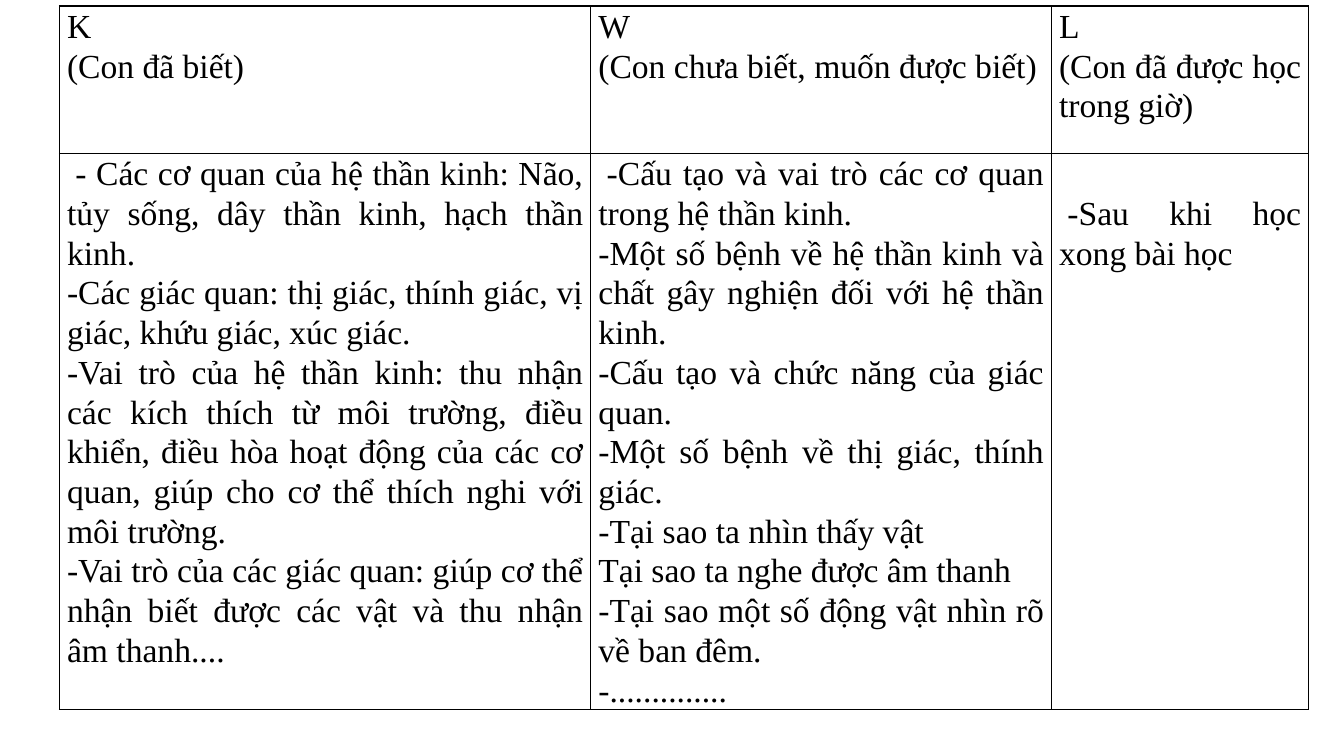
from lxml import etree
from pptx import Presentation
from pptx.dml.color import RGBColor
from pptx.enum.text import PP_ALIGN
from pptx.oxml.ns import qn
from pptx.util import Cm, Pt

JUSTIFY = PP_ALIGN.JUSTIFY
BORDERS = ("a:lnL", "a:lnR", "a:lnT", "a:lnB")
COLS = (13.39, 11.61, 6.48)
ROWS = (3.71, 14.02)
LINE = 1.0
INDENT = 0.21

HEADERS = (
    ("K", "(Con đã biết)"),
    ("W", "(Con chưa biết, muốn được biết)"),
    ("L", "(Con đã được học trong giờ)"),
)
ANSWERS = (
    (
        "- Các cơ quan của hệ thần kinh: Não, tủy sống, dây thần kinh, hạch thần kinh.",
        "-Các giác quan: thị giác, thính giác, vị giác, khứu giác, xúc giác.",
        "-Vai trò của hệ thần kinh: thu nhận các kích thích từ môi trường, điều khiển, "
        "điều hòa hoạt động của các cơ quan, giúp cho cơ thể thích nghi với môi trường.",
        "-Vai trò của các giác quan: giúp cơ thể nhận biết được các vật và thu nhận âm thanh....",
    ),
    (
        "-Cấu tạo và vai trò các cơ quan trong hệ thần kinh.",
        "-Một số bệnh về hệ thần kinh và chất gây nghiện đối với hệ thần kinh.",
        "-Cấu tạo và chức năng của giác quan.",
        "-Một số bệnh về thị giác, thính giác.",
        "-Tại sao ta nhìn thấy vật",
        "Tại sao ta nghe được âm thanh",
        "-Tại sao một số động vật nhìn rõ về ban đêm.",
        "-..............",
    ),
    ("-Sau khi học xong bài học",),
)


def rgb(value):
    return RGBColor.from_string(value)


class Deck:
    """Holds the style and the current slide of the KWL chart."""

    font = {"name": "Times New Roman", "size": Pt(24), "bold": False}
    para = {"alignment": JUSTIFY, "line_spacing": 1.07}
    margins = {"margin_left": Cm(0.19), "margin_right": Cm(0.19), "margin_bottom": 0}
    ink = "000000"

    def __init__(self, prs):
        self.s = prs.slides.add_slide(prs.slide_layouts[6])

    def apply(self, target, values):
        for name, value in values.items():
            setattr(target, name, value)

    def borders(self, cell):
        tcPr = cell._tc.get_or_add_tcPr()
        for i, tag in enumerate(BORDERS):
            ln = etree.Element(qn(tag), w=str(Pt(1)))
            fill = etree.SubElement(ln, qn("a:solidFill"))
            etree.SubElement(fill, qn("a:srgbClr"), val=self.ink)
            tcPr.insert(i, ln)

    def cell(self, cell, lines, top=0, indent=0):
        self.apply(cell, {**self.margins, "margin_top": Cm(top)})
        cell.fill.background()
        self.borders(cell)
        tf = cell.text_frame
        for i, line in enumerate(lines):
            p = tf.add_paragraph() if i else tf.paragraphs[0]
            self.apply(p, self.para)
            if indent and i == 0:
                p._p.get_or_add_pPr().set("indent", str(Cm(indent)))
            r = p.add_run()
            r.text = line
            self.apply(r.font, self.font)
            r.font.color.rgb = rgb(self.ink)

    def table(self, left, top, cols, rows):
        frame = self.s.shapes.add_table(
            len(rows), len(cols), Cm(left), Cm(top), Cm(sum(cols)), Cm(sum(rows)))
        tbl = frame.table
        self.apply(tbl, {"first_row": False, "horz_banding": False})
        for col, width in zip(tbl.columns, cols):
            col.width = Cm(width)
        for row, height in zip(tbl.rows, rows):
            row.height = Cm(height)
        return tbl


def main():
    prs = Presentation()
    prs.slide_width, prs.slide_height = Cm(33.87), Cm(19.05)
    deck = Deck(prs)
    tbl = deck.table(1.5, 0.15, COLS, ROWS)
    for c, (header, answer) in enumerate(zip(HEADERS, ANSWERS)):
        deck.cell(tbl.cell(0, c), header)
        top = LINE if c == len(COLS) - 1 else 0
        deck.cell(tbl.cell(1, c), answer, top, INDENT)
    prs.save("out.pptx")


if __name__ == "__main__":
    main()
